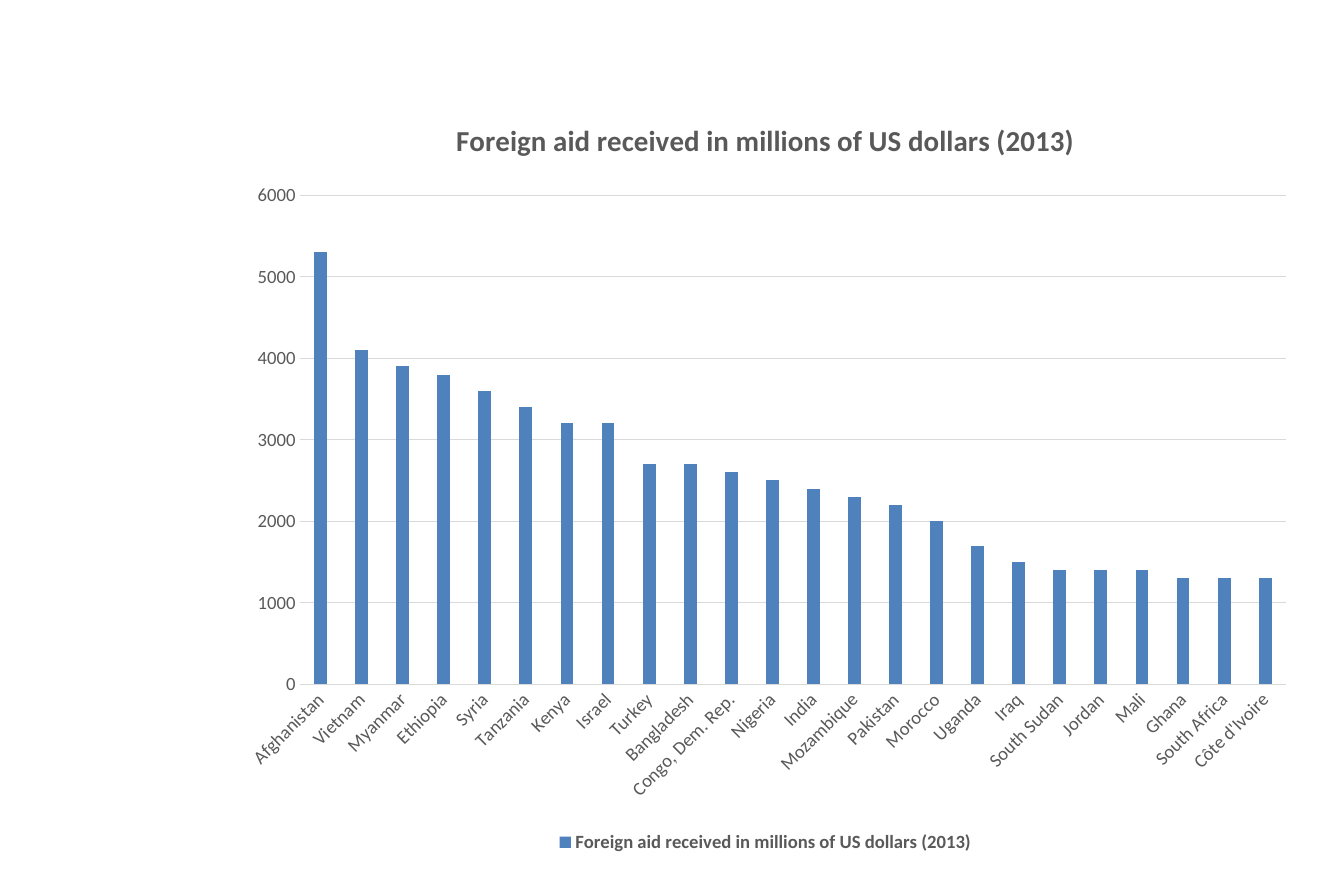
import pptx
import pptx.chart.data
import pptx.dml.color
import pptx.enum.chart
import pptx.oxml.ns
import pptx.util

Pt = pptx.util.Pt
FONT = "Calibri"
GRAY = pptx.dml.color.RGBColor(0x59, 0x59, 0x59)
LIGHT_GRAY = pptx.dml.color.RGBColor(0xD9, 0xD9, 0xD9)
BLUE = pptx.dml.color.RGBColor(0x4F, 0x81, 0xBD)
BLACK = pptx.dml.color.RGBColor(0x00, 0x00, 0x00)

TITLE = "Foreign aid received in millions of US dollars (2013)"
AID = {
    " Afghanistan": 5300,
    " Vietnam": 4100,
    " Myanmar": 3900,
    " Ethiopia": 3800,
    " Syria": 3600,
    " Tanzania": 3400,
    " Kenya": 3200,
    " Israel": 3200,
    " Turkey": 2700,
    " Bangladesh": 2700,
    " Congo, Dem. Rep.": 2600,
    " Nigeria": 2500,
    " India": 2400,
    " Mozambique": 2300,
    " Pakistan": 2200,
    " Morocco": 2000,
    " Uganda": 1700,
    " Iraq": 1500,
    " South Sudan": 1400,
    " Jordan": 1400,
    " Mali": 1400,
    " Ghana": 1300,
    " South Africa": 1300,
    " Côte d'Ivoire": 1300,
}


def format_font(font, size=12, bold=False, color=GRAY):
    font.name = FONT
    font.size = Pt(size)
    font.bold = bold
    font.color.rgb = color


def write_text(text_frame, text, **font_format):
    paragraph = text_frame.paragraphs[0]
    run = paragraph.add_run()
    run.text = text
    format_font(run.font, **font_format)


def format_line(line, color=LIGHT_GRAY, width=0.75):
    line.color.rgb = color
    line.width = Pt(width)


def add_aid_chart(slide):
    chart_data = pptx.chart.data.CategoryChartData(number_format="#,##0.00")
    chart_data.categories = list(AID)
    chart_data.add_series(TITLE, list(AID.values()))
    frame = slide.shapes.add_chart(
        pptx.enum.chart.XL_CHART_TYPE.COLUMN_CLUSTERED,
        Pt(144), Pt(60.5), Pt(696.5), Pt(491), chart_data)
    chart = frame.chart
    format_font(chart.font, size=10, color=BLACK)
    return chart


def format_columns(chart):
    plot = chart.plots[0]
    plot.gap_width = 219
    plot.overlap = -27
    plot.vary_by_categories = False
    series = plot.series[0]
    series.invert_if_negative = False
    series.format.fill.solid()
    series.format.fill.fore_color.rgb = BLUE


def format_axes(chart):
    category_axis, value_axis = chart.category_axis, chart.value_axis
    for axis in (category_axis, value_axis):
        format_font(axis.tick_labels.font)
        axis.major_tick_mark = pptx.enum.chart.XL_TICK_MARK.NONE
        axis.minor_tick_mark = pptx.enum.chart.XL_TICK_MARK.NONE
    format_line(category_axis.format.line)
    text_properties = category_axis._element.find(pptx.oxml.ns.qn("c:txPr"))
    body = text_properties.find(pptx.oxml.ns.qn("a:bodyPr"))
    body.set("rot", "-2700000")
    body.set("vert", "horz")

    value_axis.minimum_scale = 0
    value_axis.maximum_scale = 6000
    value_axis.major_unit = 1000
    value_axis.tick_labels.number_format = "General"
    value_axis.tick_labels.number_format_is_linked = False
    value_axis.format.line.fill.background()
    value_axis.has_major_gridlines = True
    format_line(value_axis.major_gridlines.format.line)


def add_title_and_legend(chart):
    chart.has_title = True
    write_text(chart.chart_title.text_frame, TITLE, size=18.6, bold=True)
    chart.chart_title.include_in_layout = False
    chart.has_legend = True
    chart.legend.position = pptx.enum.chart.XL_LEGEND_POSITION.BOTTOM
    chart.legend.include_in_layout = False
    format_font(chart.legend.font, bold=True)


def main():
    presentation = pptx.Presentation()
    presentation.slide_width = Pt(864)
    presentation.slide_height = Pt(576)
    slide = presentation.slides.add_slide(presentation.slide_layouts[6])
    chart = add_aid_chart(slide)
    format_columns(chart)
    format_axes(chart)
    add_title_and_legend(chart)
    presentation.save("out.pptx")


if __name__ == "__main__":
    main()
